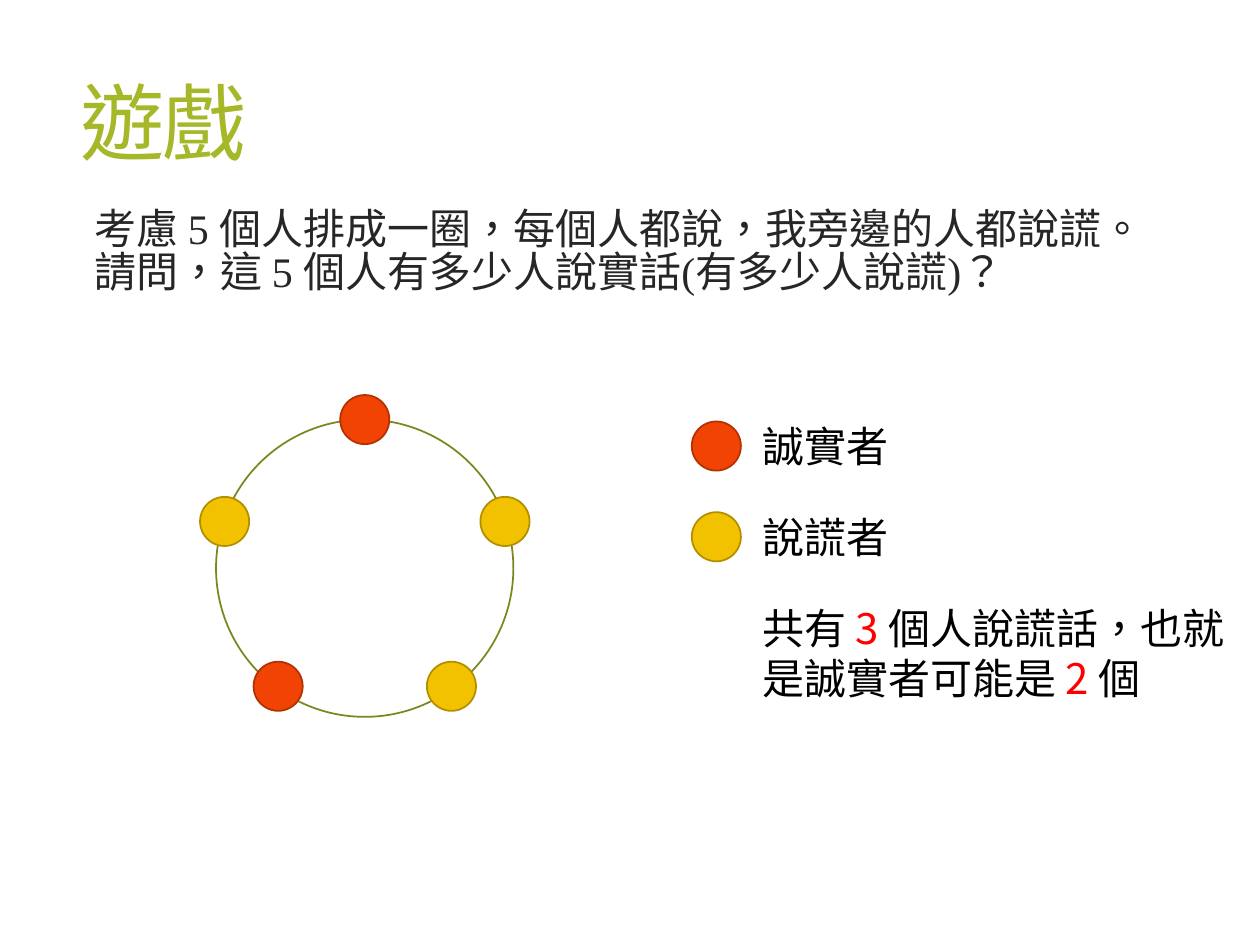
import math

import pptx
import pptx.dml.color
import pptx.enum.shapes
import pptx.enum.text
import pptx.oxml.ns
import pptx.util

COLUMNS, ROWS = 100, 75
COLORS = {
    "title": "A6B727",
    "body": "262626",
    "black": "000000",
    "accent": "FF0000",
    "ring": "7B871D",
    "honest": "F04304",
    "honest_edge": "B23203",
    "liar": "F2C100",
    "liar_edge": "B38F00",
}
SERIF, SANS = "Times New Roman", "Noto Sans CJK SC"
DOT = 3.9


class Slide:
    def __init__(self, deck):
        self.page = deck.slides.add_slide(deck.slide_layouts[5])
        self.column = deck.slide_width / COLUMNS
        self.row = deck.slide_height / ROWS

    def area(self, left, top, width, height):
        return (round(left * self.column), round(top * self.row),
                round(width * self.column), round(height * self.row))

    def color(self, name):
        return pptx.dml.color.RGBColor.from_string(COLORS[name])

    def add_span(self, para, text, size, font, color, spacing=None):
        span = para.add_run()
        span.text = text
        span.font.size = pptx.util.Pt(size)
        span.font.name = font
        span.font.color.rgb = self.color(color)
        properties = span.font._element
        properties.set("lang", "zh-TW")
        if spacing is not None:
            properties.set("spc", str(spacing))
        east_asian = properties.makeelement(pptx.oxml.ns.qn("a:ea"), {"typeface": SANS})
        properties.find(pptx.oxml.ns.qn("a:latin")).addnext(east_asian)

    def title(self, text, area):
        box = self.page.shapes.title
        box.left, box.top, box.width, box.height = self.area(*area)
        frame = box.text_frame
        frame.vertical_anchor = pptx.enum.text.MSO_ANCHOR.MIDDLE
        para = frame.paragraphs[0]
        para.alignment = pptx.enum.text.PP_ALIGN.LEFT
        para.line_spacing = 0.9
        self.add_span(para, text, 48, SERIF, "title", spacing=-120)

    def question(self, text, area):
        frame = self.page.shapes.add_textbox(*self.area(*area)).text_frame
        frame.word_wrap = True
        frame.margin_left = pptx.util.Inches(0.2)
        para = frame.paragraphs[0]
        para.line_spacing = 0.85
        para.space_before = pptx.util.Pt(13)
        self.add_span(para, text, 24, SERIF, "body")

    def label(self, lines, area):
        frame = self.page.shapes.add_textbox(*self.area(*area)).text_frame
        frame.word_wrap = False
        for index, line in enumerate(lines):
            para = frame.add_paragraph() if index else frame.paragraphs[0]
            for text, color in line:
                self.add_span(para, text, 24, SANS, color)

    def circle(self, x, y, diameter, edge, fill=None):
        box = self.page.shapes.add_shape(
            pptx.enum.shapes.MSO_SHAPE.OVAL,
            *self.area(x - diameter / 2, y - diameter / 2, diameter, diameter))
        box.shadow.inherit = False
        box.line.color.rgb = self.color(edge)
        box.line.width = pptx.util.Pt(1)
        if fill:
            box.fill.solid()
            box.fill.fore_color.rgb = self.color(fill)
        else:
            box.fill.background()

    def person(self, x, y, role):
        self.circle(x, y, DOT, role + "_edge", role)


def main():
    deck = pptx.Presentation()
    deck.slide_width = pptx.util.Inches(10)
    deck.slide_height = pptx.util.Inches(7.5)
    slide = Slide(deck)

    slide.title("遊戲", (5.4, 5.5, 88.4, 9.2))
    slide.question("考慮 5 個人排成一圈，每個人都說，我旁邊的人都說謊。"
                   "請問，這 5 個人有多少人說實話(有多少人說謊)？",
                   (5.5, 16.2, 88.2, 13.1))

    center_x, center_y, radius = 28.95, 45, 11.7
    slide.circle(center_x, center_y + 0.1, 23.6, "ring")
    people = ["honest", "liar", "liar", "honest", "liar"]
    for index, role in enumerate(people):
        angle = math.tau * index / len(people)
        slide.person(center_x + radius * math.sin(angle),
                     center_y - radius * math.cos(angle), role)

    for index, (role, text) in enumerate([("honest", "誠實者"), ("liar", "說謊者")]):
        y = 35.4 + 7.2 * index
        slide.person(56.85, y, role)
        slide.label([[(text, "black")]], (59.5, y - 2.5, 12.1, 5))

    slide.label([
        [("共有 ", "black"), ("3 ", "accent"), ("個人說謊話，也就", "black")],
        [("是誠實者可能是 ", "black"), ("2 ", "accent"), ("個", "black")],
    ], (59.5, 47.3, 40.7, 9.1))

    deck.save("out.pptx")


if __name__ == "__main__":
    main()
